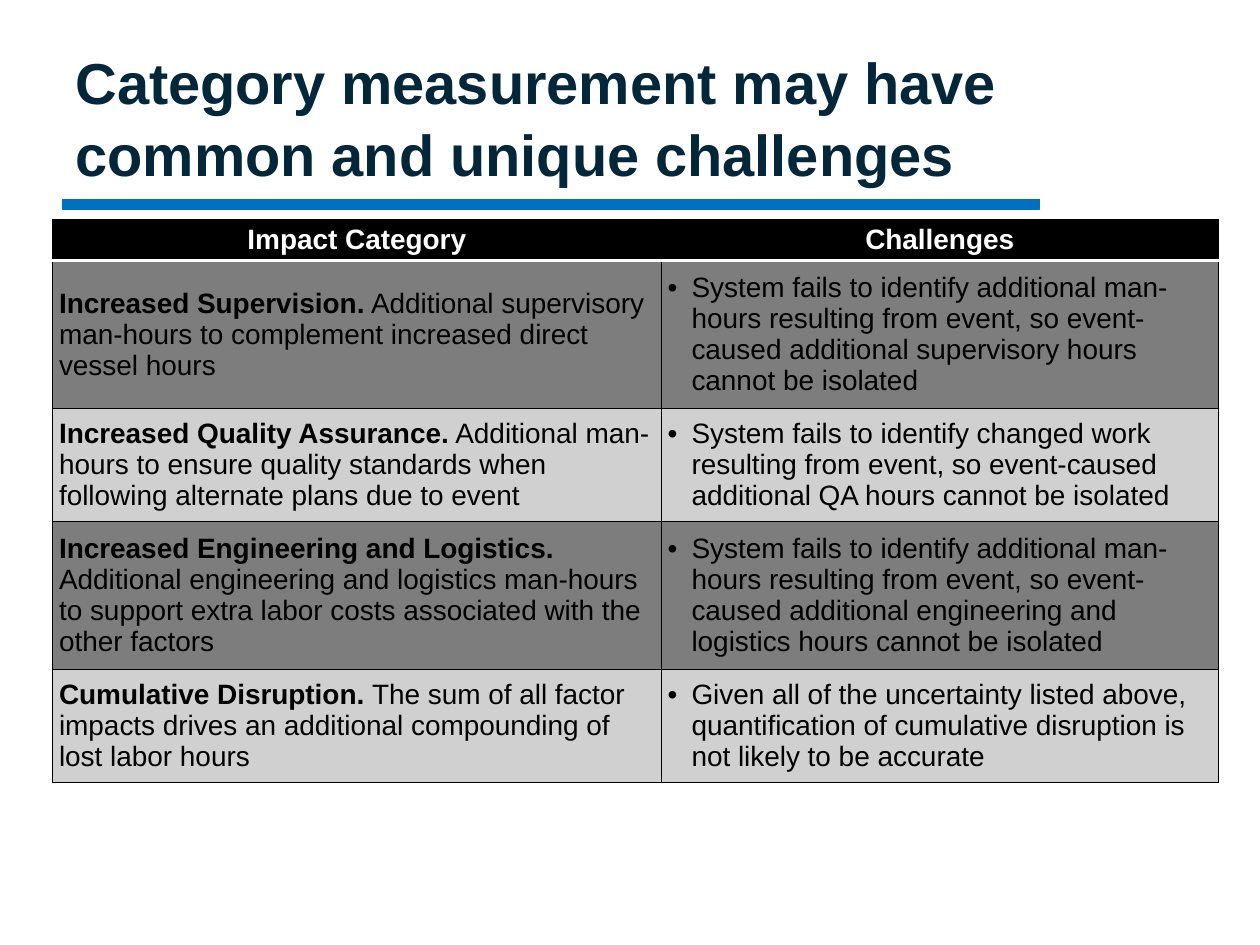
from lxml.etree import SubElement
from pptx import Presentation
from pptx.dml.color import RGBColor
from pptx.enum.shapes import MSO_SHAPE
from pptx.enum.text import MSO_ANCHOR, PP_ALIGN
from pptx.oxml.ns import qn
from pptx.util import Cm, Pt

# Content
TITLE = "Category measurement may have common and unique challenges"
HEADERS = ("Impact Category", "Challenges")
ROWS = [
    ("Increased Supervision.",
     " Additional supervisory man-hours to complement increased direct vessel hours",
     "System fails to identify additional man-hours resulting from event, "
     "so event-caused additional supervisory hours cannot be isolated"),
    ("Increased Quality Assurance.",
     " Additional man-hours to ensure quality standards when following "
     "alternate plans due to event",
     "System fails to identify changed work resulting from event, "
     "so event-caused additional QA hours cannot be isolated"),
    ("Increased Engineering and Logistics.",
     " Additional engineering and logistics man-hours to support extra labor "
     "costs associated with the other factors",
     "System fails to identify additional man-hours resulting from event, "
     "so event-caused additional engineering and logistics hours cannot be isolated"),
    ("Cumulative Disruption.",
     " The sum of all factor impacts drives an additional compounding of lost labor hours",
     "Given all of the uncertainty listed above, quantification of cumulative "
     "disruption is not likely to be accurate"),
]

# Style
FONT = "Arial"
NAVY = RGBColor(0x02, 0x26, 0x3A)
BLUE = RGBColor(0x00, 0x70, 0xC0)
BLACK = RGBColor(0x00, 0x00, 0x00)
WHITE = RGBColor(0xFF, 0xFF, 0xFF)
BANDS = (RGBColor(0x7D, 0x7D, 0x7D), RGBColor(0xD0, 0xD0, 0xD0))
COLUMN_WIDTHS = (Cm(12.27), Cm(11.23))
HEADER_HEIGHT = Cm(0.78)
BODY_HEIGHTS = (Cm(2.87), Cm(2.22))


def add_run(paragraph, text, size, color, bold=False):
    run = paragraph.add_run()
    run.text = text
    run.font.name = FONT
    run.font.size = Pt(size)
    run.font.bold = bold
    run.font.color.rgb = color


def add_bullet(paragraph):
    properties = paragraph._p.get_or_add_pPr()
    indent = Cm(0.48)
    properties.set("marL", str(indent))
    properties.set("indent", str(-indent))
    SubElement(properties, qn("a:buFont"), typeface=FONT)
    SubElement(properties, qn("a:buChar"), char="•")


def style_cell(cell, fill, margin, bottom=(BLACK, 0.75)):
    cell.vertical_anchor = MSO_ANCHOR.MIDDLE
    cell.margin_left = cell.margin_right = margin
    cell.margin_top = cell.margin_bottom = margin
    properties = cell._tc.get_or_add_tcPr()
    edge = (BLACK, 0.75)
    for tag, (color, width) in zip(("lnL", "lnR", "lnT", "lnB"), (edge, edge, edge, bottom)):
        line = SubElement(properties, qn(f"a:{tag}"), w=str(Pt(width)))
        SubElement(SubElement(line, qn("a:solidFill")), qn("a:srgbClr"), val=str(color))
    cell.fill.solid()
    cell.fill.fore_color.rgb = fill


presentation = Presentation()
presentation.slide_width, presentation.slide_height = Cm(25.4), Cm(19.05)
slide = presentation.slides.add_slide(presentation.slide_layouts[6])

# Rule under the title
rule = slide.shapes.add_shape(MSO_SHAPE.RECTANGLE, Cm(1.27), Cm(4.02), Cm(19.69), Cm(0.2))
rule.shadow.inherit = False
rule.fill.solid()
rule.fill.fore_color.rgb = BLUE
rule.line.color.rgb = BLUE
rule.line.width = Pt(0.75)

# Title
title_frame = slide.shapes.add_textbox(Cm(1.27), Cm(0.76), Cm(19.89), Cm(3.18)).text_frame
title_frame.word_wrap = True
title_frame.vertical_anchor = MSO_ANCHOR.MIDDLE
title_frame.paragraphs[0].line_spacing = 1.04
add_run(title_frame.paragraphs[0], TITLE, 33, NAVY, bold=True)

# Table grid
row_heights = [HEADER_HEIGHT] + [BODY_HEIGHTS[i % 2] for i in range(len(ROWS))]
table = slide.shapes.add_table(
    len(row_heights), len(HEADERS), Cm(1.06), Cm(4.42),
    sum(COLUMN_WIDTHS), sum(row_heights)).table
for column, width in zip(table.columns, COLUMN_WIDTHS):
    column.width = width
for row, height in zip(table.rows, row_heights):
    row.height = height

# Header row
for index, text in enumerate(HEADERS):
    cell = table.cell(0, index)
    style_cell(cell, BLACK, Cm(0.08), bottom=(WHITE, 2))
    paragraph = cell.text_frame.paragraphs[0]
    paragraph.alignment = PP_ALIGN.CENTER
    add_run(paragraph, text, 16, WHITE, bold=True)

# Body rows
for index, (category, description, challenge) in enumerate(ROWS):
    cells = table.cell(index + 1, 0), table.cell(index + 1, 1)
    for cell in cells:
        # The first row keeps the header's white edge free of a black line
        style_cell(cell, BANDS[index % 2], Cm(0.13))
        if index == 0:
            cell._tc.tcPr.remove(cell._tc.tcPr.find(qn("a:lnT")))
    impact, challenges = (cell.text_frame.paragraphs[0] for cell in cells)
    add_run(impact, category, 16, BLACK, bold=True)
    add_run(impact, description, 16, BLACK)
    add_bullet(challenges)
    add_run(challenges, challenge, 16, BLACK)

presentation.save("out.pptx")
